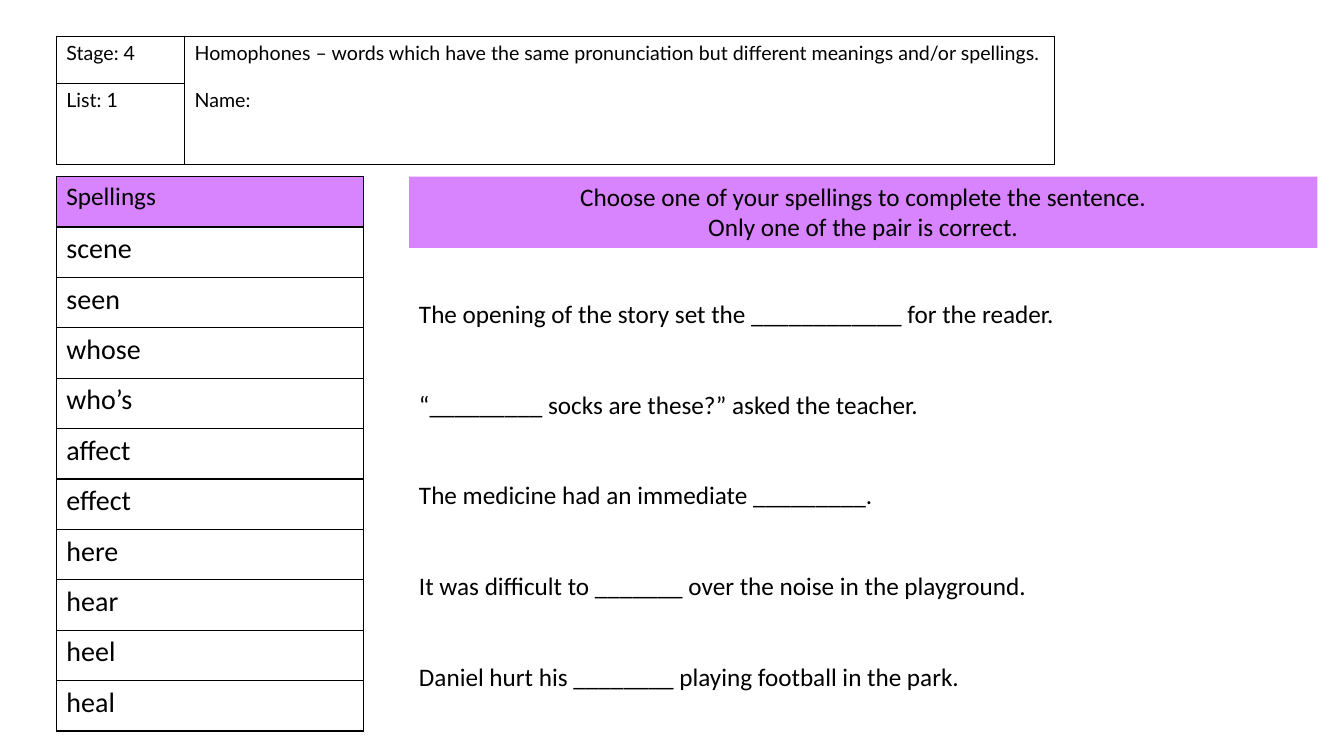
from lxml.etree import SubElement
from pptx import Presentation
from pptx.dml.color import RGBColor
from pptx.enum.shapes import MSO_SHAPE
from pptx.enum.text import MSO_ANCHOR, PP_ALIGN
from pptx.oxml.ns import qn
from pptx.util import Cm, Pt

BLACK = RGBColor(0x00, 0x00, 0x00)
WHITE = RGBColor(0xFF, 0xFF, 0xFF)
PURPLE = RGBColor(0xD8, 0x83, 0xFF)

STAGE, LIST_NUMBER = "Stage: 4", "List: 1"
TOPIC = [
    "Homophones – words which have the same pronunciation but different meanings and/or spellings.",
    "Name:",
]
HEADING = "Spellings"
SPELLINGS = ["scene", "seen", "whose", "who’s", "affect",
             "effect", "here", "hear", "heel", "heal"]
INSTRUCTIONS = [
    "Choose one of your spellings to complete the sentence.",
    "Only one of the pair is correct.",
]
SENTENCES = [
    "The opening of the story set the ____________ for the reader.",
    "“_________ socks are these?” asked the teacher.",
    "The medicine had an immediate _________.",
    "It was difficult to _______ over the noise in the playground.",
    "Daniel hurt his ________ playing football in the park.",
]

LEFT, RIGHT_COLUMN = 1.42, 10.31
BODY_TOP = 4.45


def write(frame, lines, size, font="Calibri", gap=0, align=PP_ALIGN.LEFT):
    """Fill a text frame with one paragraph a line, gap points apart."""
    for index, line in enumerate(lines):
        paragraph = frame.paragraphs[0] if index == 0 else frame.add_paragraph()
        paragraph.text = line
        paragraph.alignment = align
        paragraph.space_before = Pt(gap if index else 0)
        paragraph.font.size = Pt(size)
        paragraph.font.name = font
        paragraph.font.color.rgb = BLACK


def add_bordered_table(slide, top, widths, heights):
    """Add a white table with thin black borders on every cell."""
    table = slide.shapes.add_table(
        len(heights), len(widths), Cm(LEFT), Cm(top),
        Cm(sum(widths)), Cm(sum(heights))).table
    table.first_row = table.horz_banding = False
    for column, width in zip(table.columns, widths):
        column.width = Cm(width)
    for row, height in zip(table.rows, heights):
        row.height = Cm(height)
    for cell in table.iter_cells():
        properties = cell._tc.get_or_add_tcPr()
        for side in ("a:lnL", "a:lnR", "a:lnT", "a:lnB"):
            border = SubElement(properties, qn(side), w=str(Pt(1)))
            fill = SubElement(border, qn("a:solidFill"))
            SubElement(fill, qn("a:srgbClr"), val=str(BLACK))
        cell.fill.solid()
        cell.fill.fore_color.rgb = WHITE
    return table


def add_spellings(slide):
    words = [HEADING] + SPELLINGS
    table = add_bordered_table(slide, BODY_TOP, [7.75], [1.27] * len(words))
    for index, word in enumerate(words):
        write(table.cell(index, 0).text_frame, [word], 20 if index else 18)
    table.cell(0, 0).fill.fore_color.rgb = PURPLE


def add_header(slide):
    table = add_bordered_table(slide, 0.91, [3.23, 21.92], [1.19, 2.03])
    table.cell(0, 1).merge(table.cell(1, 1))
    write(table.cell(0, 0).text_frame, [STAGE], 14, "Lato")
    write(table.cell(1, 0).text_frame, [LIST_NUMBER], 14, "Lato")
    write(table.cell(0, 1).text_frame, TOPIC, 14, "Lato", gap=17)


def add_sentences(slide):
    box = slide.shapes.add_textbox(Cm(RIGHT_COLUMN), Cm(7.39), Cm(23.55), Cm(11.02))
    box.text_frame.word_wrap = True
    write(box.text_frame, SENTENCES, 18, gap=43.2)


def add_instructions(slide):
    banner = slide.shapes.add_shape(
        MSO_SHAPE.RECTANGLE, Cm(RIGHT_COLUMN), Cm(BODY_TOP), Cm(22.89), Cm(1.8))
    banner.shadow.inherit = False
    banner.fill.solid()
    banner.fill.fore_color.rgb = PURPLE
    banner.line.fill.background()
    banner.text_frame.word_wrap = True
    banner.text_frame.vertical_anchor = MSO_ANCHOR.TOP
    write(banner.text_frame, INSTRUCTIONS, 18, align=PP_ALIGN.CENTER)


def main():
    presentation = Presentation()
    presentation.slide_width, presentation.slide_height = Cm(33.87), Cm(19.05)
    slide = presentation.slides.add_slide(presentation.slide_layouts[6])
    add_spellings(slide)
    add_header(slide)
    add_sentences(slide)
    add_instructions(slide)
    presentation.save("out.pptx")


if __name__ == "__main__":
    main()
